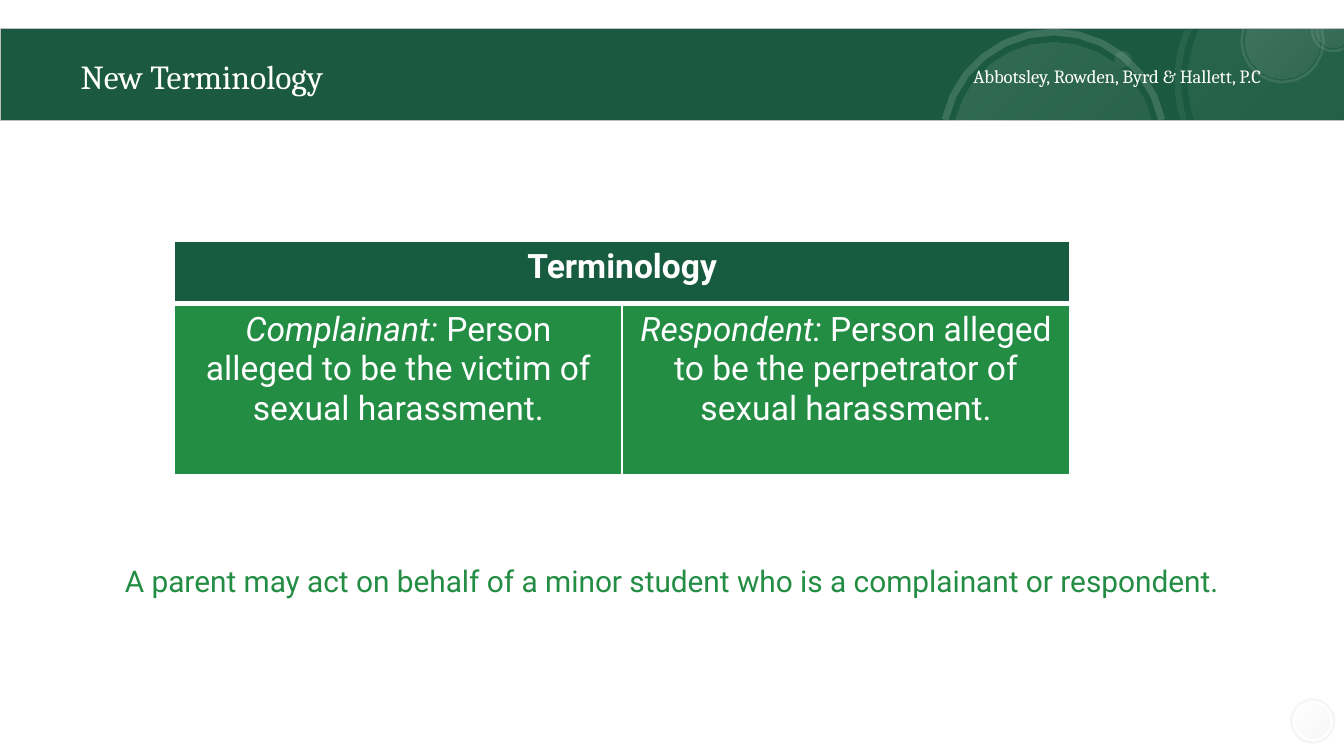
import math
from dataclasses import dataclass

import pptx
import pptx.dml.color
import pptx.enum.shapes
import pptx.enum.text
import pptx.util
from lxml import etree
from pptx.util import Cm

A = "{http://schemas.openxmlformats.org/drawingml/2006/main}"
SHAPE = pptx.enum.shapes.MSO_SHAPE
ALIGN = pptx.enum.text.PP_ALIGN
ANCHOR = pptx.enum.text.MSO_ANCHOR
WIDTH, HEIGHT = 25.4, 14.29
BAND_TOP, BAND_BOTTOM = 0.54, 2.28
ARC_STEPS = 12
WHITE, GRAY, GREEN, DARK = "FFFFFF", "B2B2B2", "238D44", "175B41"

Point = tuple[float, float]


@dataclass
class Bubble:
    x: float
    y: float
    disc: float
    inner: float
    outer: float
    ring_color: str
    disc_alpha: int
    ring_alpha: int
    start: int = 0
    corners: tuple[Point, ...] = ()
    clipped: bool = True


@dataclass
class Term:
    name: str
    meaning: str


BUBBLES = [
    Bubble(24.71, 1.52, 2.26, 2.39, 2.51, WHITE, 6, 6, 0,
           ((WIDTH, BAND_TOP), (WIDTH, BAND_BOTTOM))),
    Bubble(19.91, 2.7, 1.9, 2.03, 2.16, WHITE, 10, 15, 90),
    Bubble(24.24, 0.78, 0.71, 0.75, 0.8, WHITE, 10, 10, 270),
    Bubble(25.2, 0.56, 0.34, 0.38, 0.43, WHITE, 10, 10, 315,
           ((WIDTH, BAND_TOP),)),
    Bubble(21.22, 1.12, 0.13, 0.14, 0.17, GRAY, 10, 11, clipped=False),
    Bubble(24.81, 13.63, 0.33, 0.38, 0.43, GRAY, 10, 11, clipped=False),
]

TERMS = [
    Term("Complainant: ", "Person alleged to be the victim of sexual harassment."),
    Term("Respondent: ", "Person alleged to be the perpetrator of sexual harassment."),
]


def rgb(color: str) -> pptx.dml.color.RGBColor:
    return pptx.dml.color.RGBColor.from_string(color)


def set_alpha(sp, percent: int) -> None:
    for clr in sp._element.spPr.iter(A + "srgbClr"):
        etree.SubElement(clr, A + "alpha", val=str(percent * 1000))


def paint(sp, colors: list[str], alpha: int = 100) -> None:
    sp.shadow.inherit = False
    sp.line.fill.background()
    if len(colors) == 1:
        sp.fill.solid()
        sp.fill.fore_color.rgb = rgb(colors[0])
    else:
        sp.fill.gradient()
        sp.fill.gradient_angle = 315
        for stop, color in zip(sp.fill.gradient_stops, colors):
            stop.color.rgb = rgb(color)
    if alpha < 100:
        set_alpha(sp, alpha)


def point_on(b: Bubble, radius: float, degrees: float) -> Point:
    a = math.radians(degrees)
    return b.x + radius * math.cos(a), b.y + radius * math.sin(a)


def in_band(point: Point) -> bool:
    return point[0] <= WIDTH and BAND_TOP <= point[1] <= BAND_BOTTOM


def arc(b: Bubble, radius: float) -> list[Point]:
    visible = [d for d in range(b.start, b.start + 360)
               if in_band(point_on(b, radius, d))]
    step = (visible[-1] - visible[0]) / ARC_STEPS
    return [point_on(b, radius, visible[0] + i * step) for i in range(ARC_STEPS + 1)]


def polygon(s, points: list[Point]):
    emu = [(Cm(x), Cm(y)) for x, y in points]
    builder = s.shapes.build_freeform(*emu[0])
    builder.add_line_segments(emu[1:], close=True)
    return builder.convert_to_shape()


def circle(s, b: Bubble, radius: float, kind):
    return s.shapes.add_shape(kind, Cm(b.x - radius), Cm(b.y - radius),
                              Cm(2 * radius), Cm(2 * radius))


def draw_bubble(s, b: Bubble) -> None:
    if b.clipped:
        disc = polygon(s, arc(b, b.disc) + list(b.corners))
        ring = polygon(s, arc(b, b.outer) + arc(b, b.inner)[::-1])
    else:
        disc = circle(s, b, b.disc, SHAPE.OVAL)
        ring = circle(s, b, b.outer, SHAPE.DONUT)
        ring.adjustments[0] = (b.outer - b.inner) / (2 * b.outer)
    paint(disc, [WHITE, GRAY], b.disc_alpha)
    paint(ring, [b.ring_color], b.ring_alpha)


def format_run(r, size: int, font: str, color: str,
               bold: bool = False, italic: bool = False) -> None:
    r.font.size = pptx.util.Pt(size)
    r.font.name = font
    r.font.color.rgb = rgb(color)
    r.font.bold = bold
    r.font.italic = italic


def write_line(sp, text: str, size: int, font: str, color: str, align) -> None:
    tf = sp.text_frame
    tf.text = text
    tf.word_wrap = True
    tf.auto_size = pptx.enum.text.MSO_AUTO_SIZE.NONE
    tf.vertical_anchor = ANCHOR.MIDDLE
    p = tf.paragraphs[0]
    p.alignment = align
    format_run(p.runs[0], size, font, color)


def style_cell(cell, color: str, **borders: int) -> None:
    tc_pr = cell._tc.get_or_add_tcPr()
    for side in "LRTB":
        width = pptx.util.Pt(borders.get(side, 1))
        ln = etree.SubElement(tc_pr, A + "ln" + side, w=str(width))
        fill = etree.SubElement(ln, A + "solidFill")
        etree.SubElement(fill, A + "srgbClr", val=WHITE)
    cell.fill.solid()
    cell.fill.fore_color.rgb = rgb(color)
    cell.text_frame.paragraphs[0].alignment = ALIGN.CENTER


def draw_terms(s) -> None:
    table = s.shapes.add_table(2, 2, Cm(3.3), Cm(4.55), Cm(16.92), Cm(4.42)).table
    for col in table.columns:
        col.width = Cm(8.46)
    for row, height in zip(table.rows, (1.19, 3.23)):
        row.height = Cm(height)
    header = table.cell(0, 0)
    header.merge(table.cell(0, 1))
    header.text_frame.text = "Terminology"
    format_run(header.text_frame.paragraphs[0].runs[0], 18, "Roboto", WHITE, bold=True)
    for i, term in enumerate(TERMS):
        style_cell(table.cell(0, i), DARK, B=3)
        cell = table.cell(1, i)
        style_cell(cell, GREEN, T=3)
        p = cell.text_frame.paragraphs[0]
        for text, italic in ((term.name, True), (term.meaning, False)):
            r = p.add_run()
            r.text = text
            format_run(r, 18, "Roboto", WHITE, italic=italic)


def main() -> None:
    prs = pptx.Presentation()
    prs.slide_width, prs.slide_height = Cm(WIDTH), Cm(HEIGHT)
    s = prs.slides.add_slide(prs.slide_layouts[5])

    band = s.shapes.add_shape(SHAPE.RECTANGLE, 0, Cm(BAND_TOP),
                              Cm(WIDTH), Cm(BAND_BOTTOM - BAND_TOP))
    paint(band, ["1B5A41"])
    band.line.color.rgb = rgb("BFBFBF")
    band.line.width = pptx.util.Pt(0.25)
    for b in BUBBLES:
        draw_bubble(s, b)

    title = s.shapes.title
    title.left, title.top, title.width, title.height = Cm(1.27), Cm(0.58), Cm(12.42), Cm(1.7)
    write_line(title, "New Terminology", 18, "Cambria", WHITE, ALIGN.LEFT)
    s.shapes._spTree.append(title._element)

    note = s.shapes.add_textbox(Cm(1.27), Cm(10.47), Cm(22.86), Cm(1))
    write_line(note, "A parent may act on behalf of a minor student who is a "
               "complainant or respondent.", 16, "Roboto", GREEN, ALIGN.CENTER)
    firm = s.shapes.add_textbox(Cm(15.29), Cm(0.94), Cm(8.79), Cm(1))
    write_line(firm, "Abbotsley, Rowden, Byrd & Hallett, P.C", 10, "Cambria",
               WHITE, ALIGN.RIGHT)
    draw_terms(s)
    prs.save("out.pptx")


if __name__ == "__main__":
    main()
